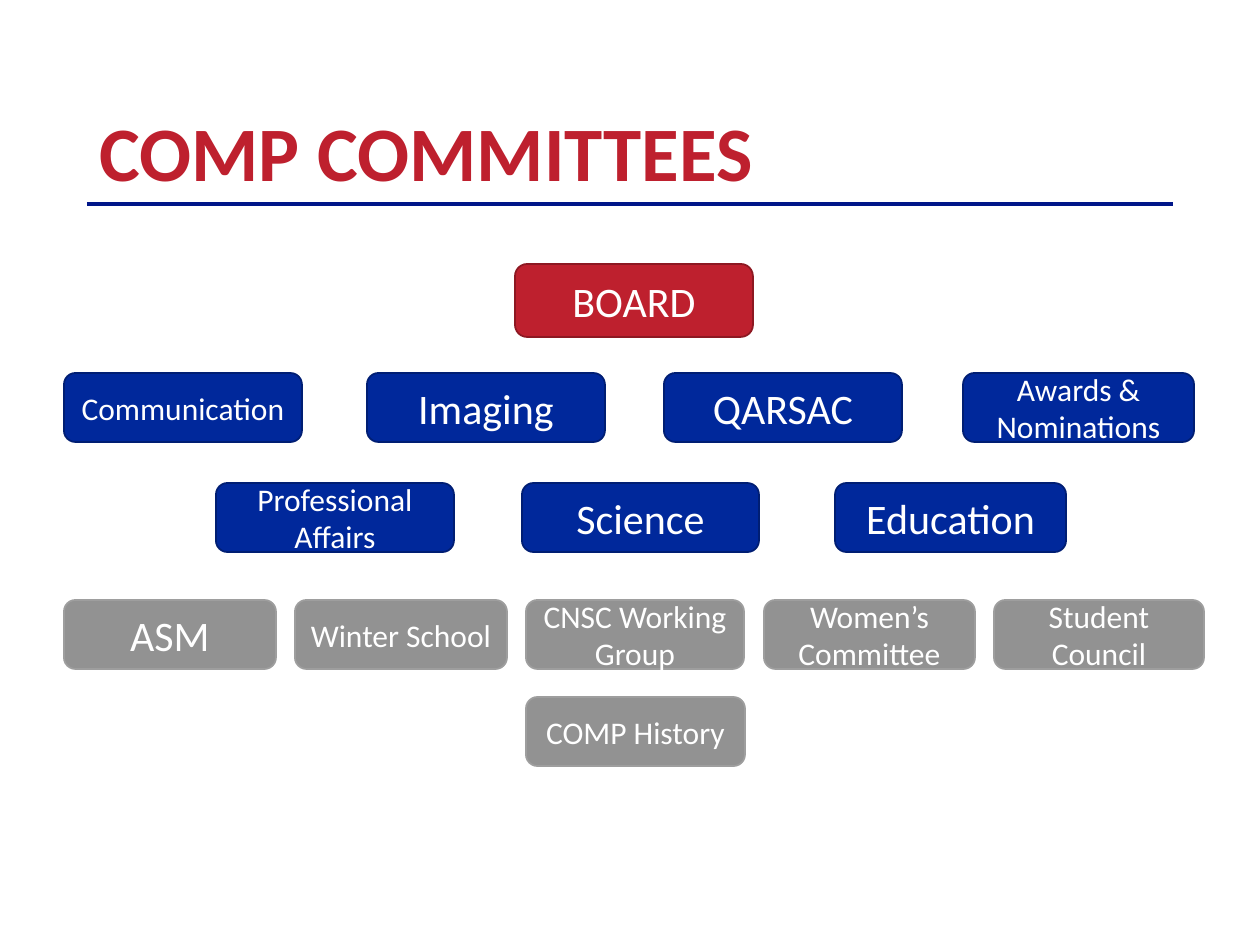
"""Build the COMP committees slide: a title over rows of committee boxes."""
from lxml.etree import SubElement
from pptx import Presentation
from pptx.dml.color import RGBColor
from pptx.enum.shapes import MSO_CONNECTOR, MSO_SHAPE
from pptx.enum.text import MSO_ANCHOR, PP_ALIGN
from pptx.oxml.ns import qn
from pptx.util import Pt

PX = 914400 / 126
RED, BLUE, GREY = ("BE202E", "8D1822"), ("00289B", "001E73"), ("929292", "9E9E9E")


def px(*values):
    return [round(v * PX) for v in values]


def write(tf, text, anchor, align, **font):
    tf.word_wrap = True
    tf.vertical_anchor = anchor
    p = tf.paragraphs[0]
    p.alignment = align
    r = p.add_run()
    r.text = text
    r.font.color.rgb = RGBColor.from_string(font.pop("color"))
    for name, value in {"name": "Calibri", **font}.items():
        setattr(r.font, name, value)
    return p


prs = Presentation()
prs.slide_width, prs.slide_height = px(1260, 945)
s = prs.slides.add_slide(prs.slide_layouts[6])

rule = s.shapes.add_connector(MSO_CONNECTOR.STRAIGHT, *px(87, 204, 1173, 204))
rule.line.color.rgb = RGBColor.from_string("001689")
rule.line.width = Pt(2)
SubElement(rule._element.spPr, qn("a:effectLst"))

title = s.shapes.add_textbox(*px(87, 50, 1086, 154))
p = write(title.text_frame, "COMP COMMITTEES", MSO_ANCHOR.BOTTOM, PP_ALIGN.LEFT,
          color=RED[0], size=Pt(44), bold=True)
p.line_spacing = 0.9

rows = [
    (264, 73, RED, [("BOARD", 515, 238, 24)]),
    (373, 69, BLUE, [("Communication", 64, 238, 18), ("Imaging", 367, 238, 24),
                     ("QARSAC", 664, 238, 24), ("Awards & Nominations", 963, 231, 18)]),
    (483, 69, BLUE, [("Professional Affairs", 216, 238, 18), ("Science", 522, 237, 24),
                     ("Education", 835, 231, 24)]),
    (600, 69, GREY, [("ASM", 64, 212, 24), ("Winter School", 295, 212, 18),
                     ("CNSC Working Group", 526, 218, 18),
                     ("Women’s Committee", 764, 211, 18), ("Student Council", 994, 210, 18)]),
    (697, 69, GREY, [("COMP History", 526, 219, 18)]),
]

for top, height, (fill, line), boxes in rows:
    for text, left, width, size in boxes:
        sp = s.shapes.add_shape(MSO_SHAPE.FLOWCHART_ALTERNATE_PROCESS,
                                *px(left, top, width, height))
        sp.shadow.inherit = False
        sp.fill.solid()
        sp.fill.fore_color.rgb = RGBColor.from_string(fill)
        sp.line.color.rgb = RGBColor.from_string(line)
        sp.line.width = Pt(1)
        write(sp.text_frame, text, MSO_ANCHOR.MIDDLE, PP_ALIGN.CENTER,
              color="FFFFFF", size=Pt(size))

prs.save("out.pptx")
